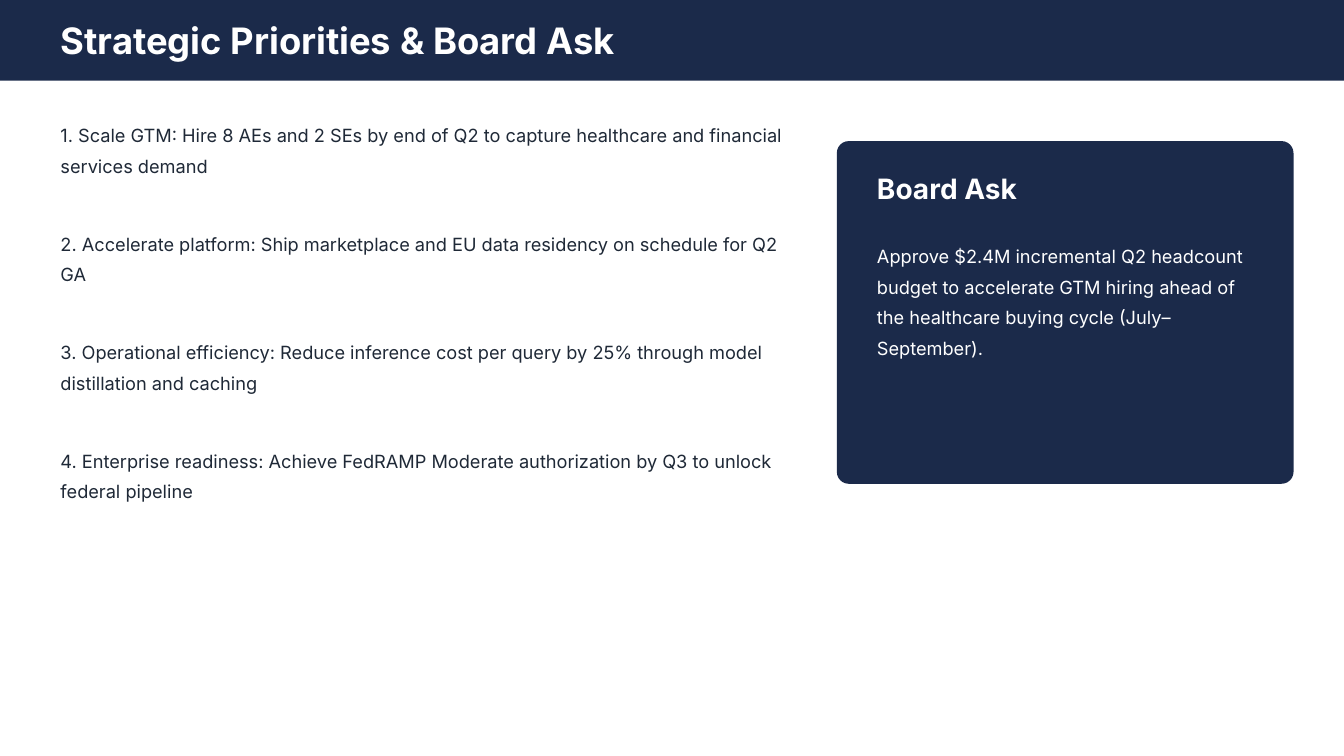
"""Build the slide with strategic priorities and the board ask."""
from dataclasses import dataclass

from lxml import etree
from pptx import Presentation
from pptx import util as u
from pptx.dml.color import RGBColor
from pptx.enum import shapes, text
from pptx.oxml import ns

TITLE = "Strategic Priorities & Board Ask"
PRIORITIES = [
    "Scale GTM: Hire 8 AEs and 2 SEs by end of Q2 to capture healthcare and financial services demand",
    "Accelerate platform: Ship marketplace and EU data residency on schedule for Q2 GA",
    "Operational efficiency: Reduce inference cost per query by 25% through model distillation and caching",
    "Enterprise readiness: Achieve FedRAMP Moderate authorization by Q3 to unlock federal pipeline",
]
ASK_HEADING = "Board Ask"
ASK = (
    "Approve $2.4M incremental Q2 headcount budget to accelerate GTM hiring "
    "ahead of the healthcare buying cycle (July–September)."
)


@dataclass(frozen=True)
class Theme:
    font: str = "Inter"
    navy: str = "1B2A4A"
    ink: str = "1F2937"
    white: str = "FFFFFF"
    title: int = 26
    heading: int = 20
    body: int = 13
    leading: float = 1.4
    item_gap: float = 33.8


THEME = Theme()
WIDTH, HEIGHT = 13.33, 7.5
MARGIN = 0.5
BAND = 0.8
TITLE_HEIGHT = 0.56
LIST_TOP, LIST_WIDTH = 1.1, 7.5
CARD_LEFT, CARD_TOP, CARD_HEIGHT = MARGIN + LIST_WIDTH + 0.3, 1.4, 3.4
CARD_WIDTH = WIDTH - MARGIN - CARD_LEFT
CARD_PAD = 0.3


def place(shape, left, top, width, height):
    shape.left, shape.top = u.Inches(left), u.Inches(top)
    shape.width, shape.height = u.Inches(width), u.Inches(height)


def add_panel(page, kind, *area):
    panel = page.shapes.add_shape(kind, *map(u.Inches, area))
    panel.shadow.inherit = False
    panel.fill.solid()
    panel.fill.fore_color.rgb = RGBColor.from_string(THEME.navy)
    panel.line.fill.background()
    return panel


def style(para, size, color, bold=False, leading=1.0, after=0):
    para.alignment = text.PP_ALIGN.LEFT
    para.line_spacing = leading
    para.space_before, para.space_after = u.Pt(0), u.Pt(after)
    para.font.name, para.font.size, para.font.bold = THEME.font, u.Pt(size), bold
    para.font.color.rgb = RGBColor.from_string(color)


def prepare(frame, anchor=text.MSO_ANCHOR.TOP):
    frame.word_wrap = True
    frame.auto_size = text.MSO_AUTO_SIZE.NONE
    frame.vertical_anchor = anchor


def number_item(para, number, wording):
    para.text = f"{number}. {wording}"
    props = para._p.get_or_add_pPr()
    props.set("marL", "0")
    props.set("indent", "0")
    etree.SubElement(props, ns.qn("a:buNone"))


def add_header(page):
    band = add_panel(page, shapes.MSO_SHAPE.RECTANGLE, 0, 0, WIDTH, BAND)
    title = page.shapes.title
    title.element.addprevious(band.element)
    place(title, MARGIN, (BAND - TITLE_HEIGHT) / 2, WIDTH - 2 * MARGIN, TITLE_HEIGHT)
    prepare(title.text_frame, text.MSO_ANCHOR.MIDDLE)
    title.text_frame.text = TITLE
    style(title.text_frame.paragraphs[0], THEME.title, THEME.white, bold=True)


def add_priorities(page):
    box = page.placeholders[1]
    place(box, MARGIN, LIST_TOP, LIST_WIDTH, HEIGHT - MARGIN - LIST_TOP)
    frame = box.text_frame
    prepare(frame)
    for number, wording in enumerate(PRIORITIES, 1):
        para = frame.paragraphs[0] if number == 1 else frame.add_paragraph()
        number_item(para, number, wording)
        style(para, THEME.body, THEME.ink, leading=THEME.leading, after=THEME.item_gap)


def add_board_ask(page):
    card = add_panel(page, shapes.MSO_SHAPE.ROUNDED_RECTANGLE,
                     CARD_LEFT, CARD_TOP, CARD_WIDTH, CARD_HEIGHT)
    card.adjustments[0] = 0.035
    rows = [
        (ASK_HEADING, 0.25, 0.5, THEME.heading, True, 1.0),
        (ASK, 0.9, 2.2, THEME.body, False, THEME.leading),
    ]
    for wording, offset, height, size, bold, leading in rows:
        area = (CARD_LEFT + CARD_PAD, CARD_TOP + offset, CARD_WIDTH - 2 * CARD_PAD, height)
        box = page.shapes.add_textbox(*map(u.Inches, area))
        prepare(box.text_frame)
        box.text_frame.text = wording
        style(box.text_frame.paragraphs[0], size, THEME.white, bold, leading)


def main():
    deck = Presentation()
    deck.slide_width, deck.slide_height = u.Inches(WIDTH), u.Inches(HEIGHT)
    page = deck.slides.add_slide(deck.slide_layouts[1])
    add_header(page)
    add_priorities(page)
    add_board_ask(page)
    deck.save("out.pptx")


if __name__ == "__main__":
    main()
